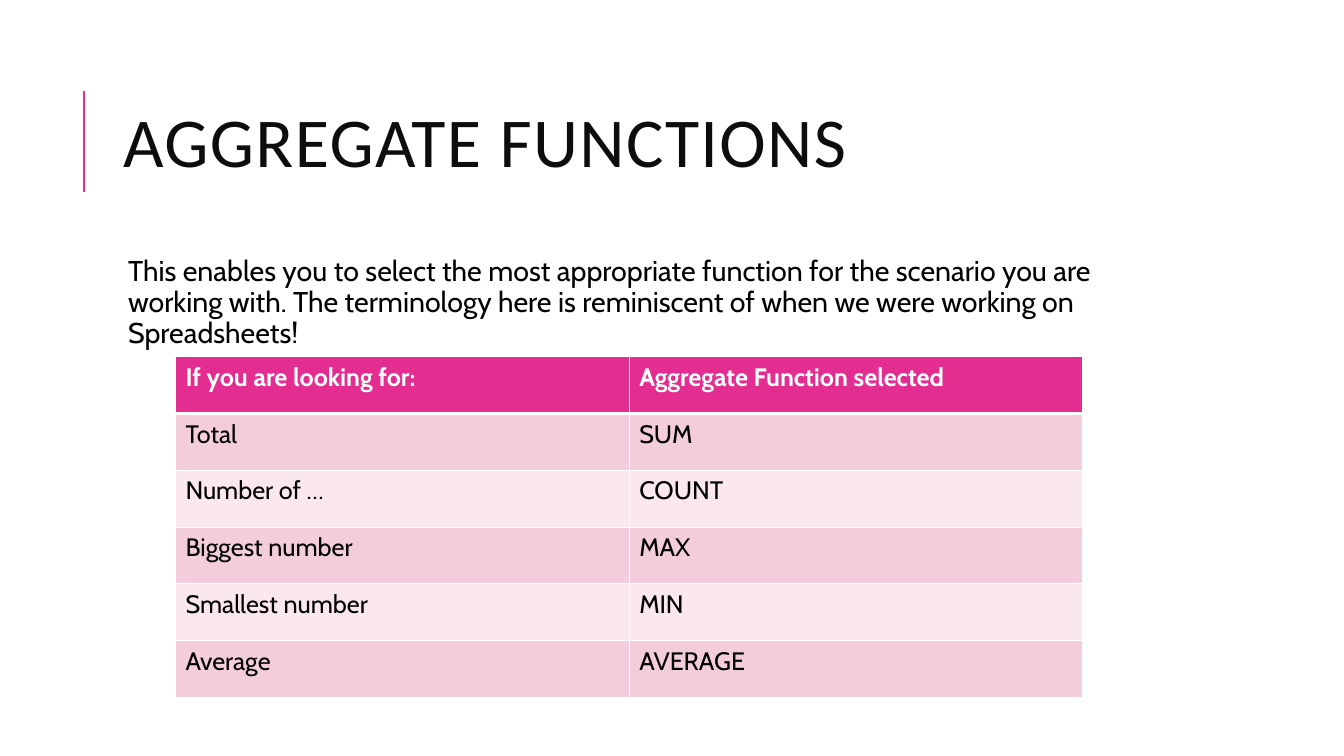
from typing import Any, NamedTuple

import pptx
import pptx.dml.color
import pptx.enum.shapes
import pptx.enum.text
import pptx.oxml.ns
import pptx.util
from lxml import etree

Inches = pptx.util.Inches
Pt = pptx.util.Pt
RGB = pptx.dml.color.RGBColor
qn = pptx.oxml.ns.qn

PINK = RGB(0xE3, 0x2D, 0x91)
ROSE = RGB(0xF4, 0xCD, 0xDC)
PALE = RGB(0xFA, 0xE8, 0xEE)
INK = RGB(0x0D, 0x0D, 0x0D)
BLACK = RGB(0, 0, 0)
WHITE = RGB(0xFF, 0xFF, 0xFF)


class Row(NamedTuple):
    goal: str
    func: str


ROWS = [
    Row("If you are looking for:", "Aggregate Function selected"),
    Row("Total", "SUM"),
    Row("Number of …", "COUNT"),
    Row("Biggest number", "MAX"),
    Row("Smallest number", "MIN"),
    Row("Average", "AVERAGE"),
]
INTRO = (
    "This enables you to select the most appropriate function for the scenario "
    "you are working with. The terminology here is reminiscent of when we were "
    "working on Spreadsheets!"
)


def style(font: Any, name: str, size: float, color: RGB, bold: bool = False) -> None:
    for key, value in {"name": name, "size": Pt(size), "bold": bold}.items():
        setattr(font, key, value)
    font.color.rgb = color


def edge(cell: Any, side: str, width: float) -> None:
    props = cell._tc.get_or_add_tcPr()
    line = etree.SubElement(props, qn(f"a:ln{side}"), w=str(Pt(width)))
    fill = etree.SubElement(line, qn("a:solidFill"))
    etree.SubElement(fill, qn("a:srgbClr"), val=str(WHITE))


def add_rule(slide: Any) -> None:
    rule = slide.shapes.add_connector(
        pptx.enum.shapes.MSO_CONNECTOR.STRAIGHT,
        Inches(0.83), Inches(1.9), Inches(0.83), Inches(0.9))
    rule.line.color.rgb = PINK
    rule.line.width = Pt(1.5)
    etree.SubElement(rule._element.spPr, qn("a:effectLst"))


def add_title(slide: Any) -> None:
    title = slide.shapes.title
    place = {"left": 1.12, "top": 0.64, "width": 10.63, "height": 1.64}
    for key, value in place.items():
        setattr(title, key, Inches(value))
    frame = title.text_frame
    frame.text = "AGGREGATE FUNCTIONS"
    frame.vertical_anchor = pptx.enum.text.MSO_ANCHOR.MIDDLE
    frame.auto_size = pptx.enum.text.MSO_AUTO_SIZE.NONE
    para = frame.paragraphs[0]
    para.alignment = pptx.enum.text.PP_ALIGN.LEFT
    para.line_spacing = 0.8
    run = para.runs[0]
    style(run.font, "Calibri", 50, INK)
    run._r.get_or_add_rPr().set("spc", "100")


def add_intro(slide: Any) -> None:
    box = slide.shapes.add_textbox(
        Inches(1.12), Inches(2.5), Inches(10.63), Inches(0.82))
    frame = box.text_frame
    frame.word_wrap = True
    pads = {"left": 0.15, "top": 0.05, "right": 0.05, "bottom": 0.05}
    for side, pad in pads.items():
        setattr(frame, f"margin_{side}", Inches(pad))
    para = frame.paragraphs[0]
    para.text = INTRO
    para.line_spacing = 0.9
    para.space_after = Pt(2)
    style(para.runs[0].font, "Cabin", 20.4, BLACK)


def add_grid(slide: Any) -> None:
    high = Inches(3.38)
    grid = slide.shapes.add_table(
        len(ROWS), len(Row._fields),
        Inches(1.74), Inches(3.54), Inches(9), high).table
    for i, row in enumerate(ROWS):
        head = i == 0
        grid.rows[i].height = high // len(ROWS)
        for j, text in enumerate(row):
            cell = grid.cell(i, j)
            for side in "LRTB":
                thick = (head and side == "B") or (i == 1 and side == "T")
                edge(cell, side, 3 if thick else 1)
            cell.fill.solid()
            cell.fill.fore_color.rgb = PINK if head else ROSE if i % 2 else PALE
            cell.text = text
            font = cell.text_frame.paragraphs[0].runs[0].font
            style(font, "Cabin", 18, WHITE if head else BLACK, head)


def main() -> None:
    deck = pptx.Presentation()
    deck.slide_width = Inches(13.33)
    deck.slide_height = Inches(7.5)
    slide = deck.slides.add_slide(deck.slide_layouts.get_by_name("Title Only"))

    # Heading with its side rule
    add_rule(slide)
    add_title(slide)

    # Introduction and lookup table
    add_intro(slide)
    add_grid(slide)
    deck.save("out.pptx")


if __name__ == "__main__":
    main()
